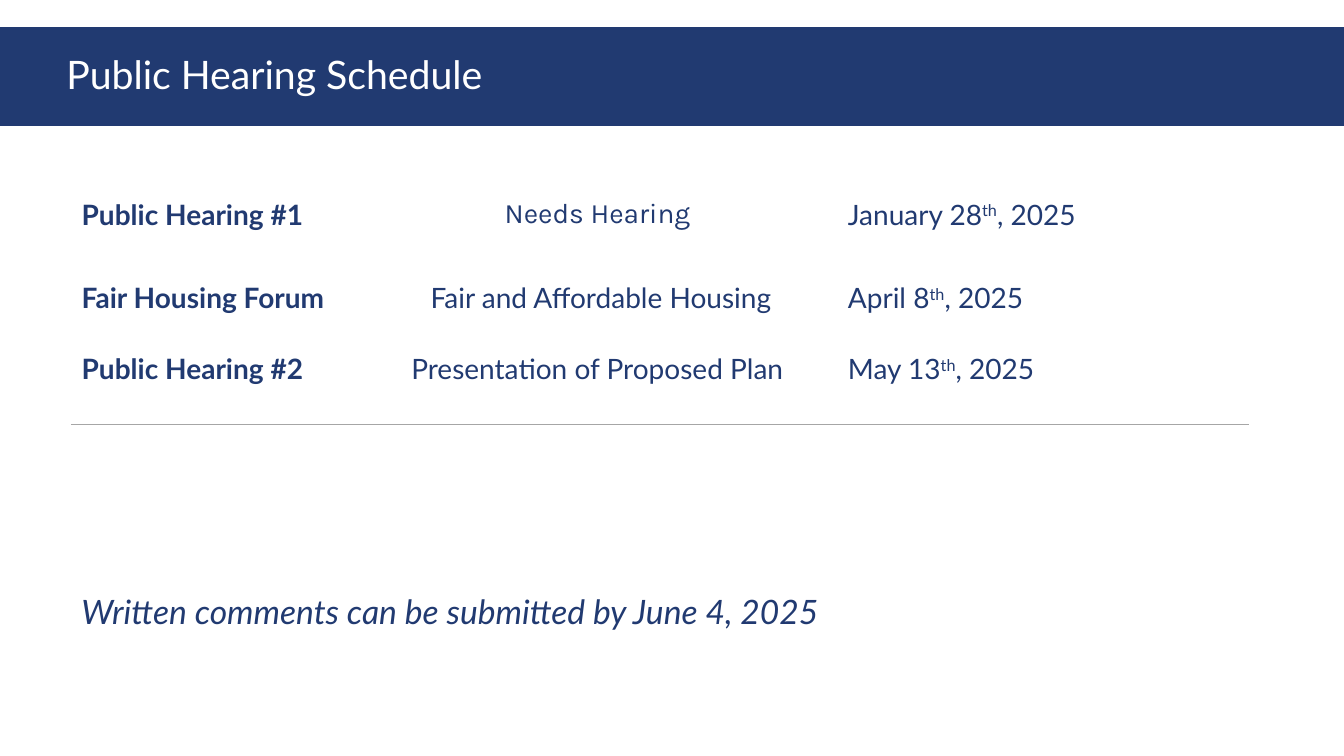
from lxml import etree
from pptx import Presentation
from pptx.dml.color import RGBColor
from pptx.enum.shapes import MSO_SHAPE
from pptx.enum.text import MSO_ANCHOR, PP_ALIGN
from pptx.oxml.ns import qn
from pptx.util import Inches, Pt

TITLE = "Public Hearing Schedule"
HEARINGS = [
    ("Public Hearing #1", "Needs Hearing ", ("January 28", "th", ", 2025")),
    ("Fair Housing Forum", "Fair and Affordable Housing", ("April 8", "th", ", 2025")),
    ("Public Hearing #2", "Presentation of Proposed Plan ", ("May 13", "th", ", 2025")),
]
COMMENT_NOTE = "Written comments can be submitted by June 4, 2025"
COLUMN_WIDTHS = (2.9, 4.7, 4.07)
ROW_HEIGHTS = (0.83, 0.7, 0.77)

NAVY = RGBColor(0x21, 0x3A, 0x71)
WHITE = RGBColor(0xFF, 0xFF, 0xFF)
RULE_GREY = RGBColor(0xA6, 0xA6, 0xA6)
RECTANGLE = MSO_SHAPE.RECTANGLE
MIDDLE = MSO_ANCHOR.MIDDLE
LEFT, CENTER = PP_ALIGN.LEFT, PP_ALIGN.CENTER


def add_span(para, text, size, color, font="Lato", bold=False, italic=False):
    span = para.add_run()
    span.text = text
    span.font.name = font
    span.font.size = Pt(size)
    span.font.color.rgb = color
    span.font.bold = bold
    span.font.italic = italic
    return span


def add_bottom_rule(cell):
    properties = cell._tc.get_or_add_tcPr()
    rule = etree.Element(qn("a:lnB"), w=str(Pt(1)))
    fill = etree.SubElement(rule, qn("a:solidFill"))
    etree.SubElement(fill, qn("a:srgbClr"), val=str(RULE_GREY))
    properties.insert(0, rule)


def add_title_band(page):
    band = page.shapes.add_shape(RECTANGLE, 0, Inches(0.27), Inches(13.33), Inches(0.98))
    band.shadow.inherit = False
    band.fill.solid()
    band.fill.fore_color.rgb = NAVY
    band.line.fill.background()
    frame = band.text_frame
    frame.margin_left = Inches(0.66)
    frame.vertical_anchor = MIDDLE
    para = frame.paragraphs[0]
    para.alignment = LEFT
    para.line_spacing = 0.9
    add_span(para, TITLE, 28, WHITE)


def add_schedule(page):
    table = page.shapes.add_table(
        len(HEARINGS), len(COLUMN_WIDTHS), Inches(0.71), Inches(1.91),
        Inches(sum(COLUMN_WIDTHS)), Inches(sum(ROW_HEIGHTS))).table
    table.first_row = False
    table.horz_banding = False
    for column, width in zip(table.columns, COLUMN_WIDTHS):
        column.width = Inches(width)
    for row, height in zip(table.rows, ROW_HEIGHTS):
        row.height = Inches(height)

    for row_index, (event, topic, date) in enumerate(HEARINGS):
        cells = [table.cell(row_index, index) for index in range(len(COLUMN_WIDTHS))]
        for cell in cells:
            cell.fill.background()
            add_bottom_rule(cell)
        event_para, topic_para, date_para = [cell.text_frame.paragraphs[0] for cell in cells]
        add_span(event_para, event, 20, NAVY, bold=True)
        topic_para.alignment = CENTER
        add_span(topic_para, topic, 20, NAVY, font="Karla" if row_index == 0 else "Lato")
        day, suffix, year = [add_span(date_para, part, 20, NAVY) for part in date]
        suffix.font._element.set("baseline", "30000")


def add_comment_note(page):
    box = page.shapes.add_textbox(Inches(0.71), Inches(5.8), Inches(11.5), Inches(0.52))
    frame = box.text_frame
    frame.word_wrap = True
    frame.vertical_anchor = MIDDLE
    add_span(frame.paragraphs[0], COMMENT_NOTE, 24, NAVY, italic=True)


def main():
    deck = Presentation()
    deck.slide_width = Inches(13.33)
    deck.slide_height = Inches(7.5)
    page = deck.slides.add_slide(deck.slide_layouts[6])
    add_title_band(page)
    add_schedule(page)
    add_comment_note(page)
    deck.save("out.pptx")


if __name__ == "__main__":
    main()
